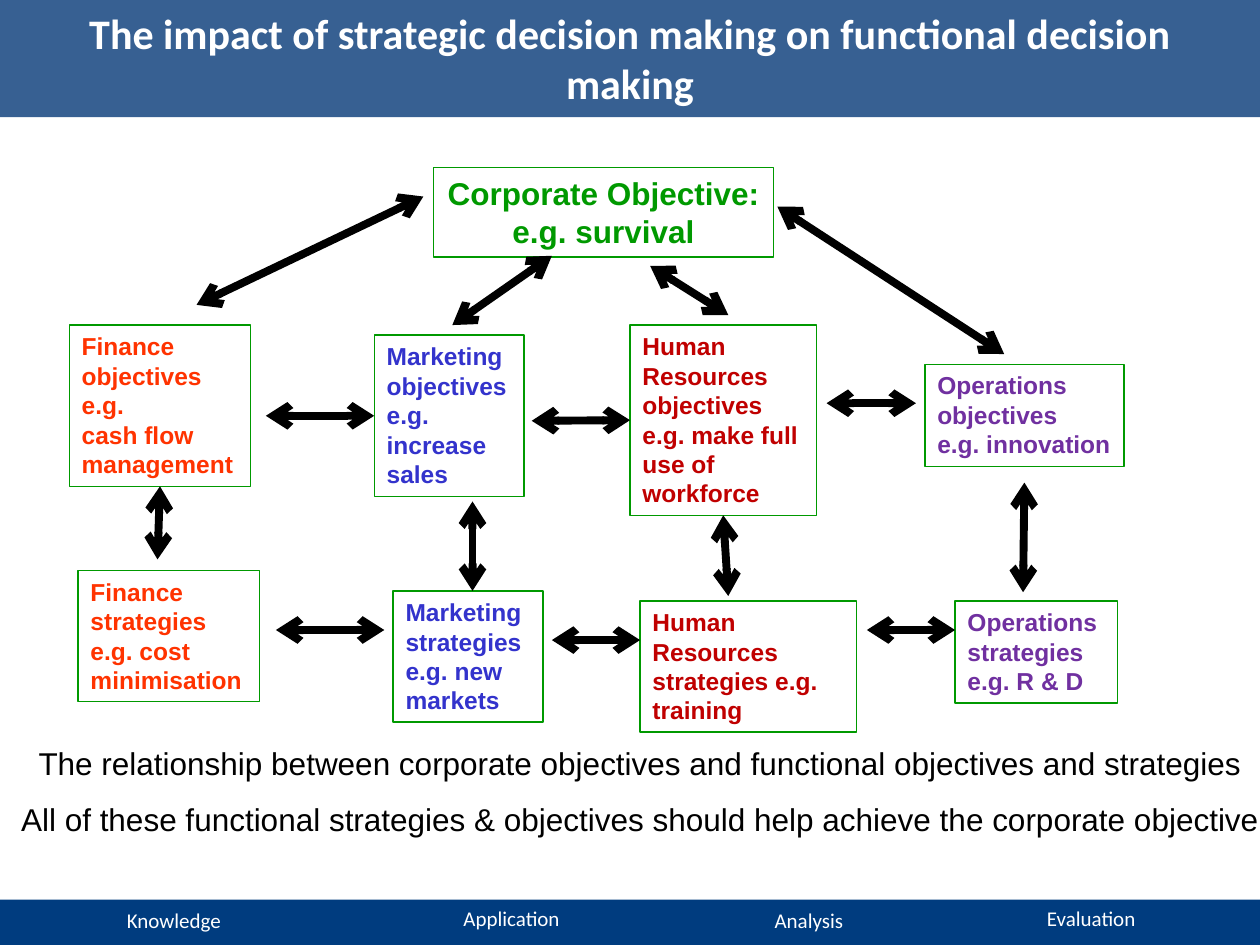
from dataclasses import dataclass

from lxml.etree import SubElement
from pptx import Presentation
from pptx.dml.color import RGBColor
from pptx.enum.shapes import MSO_CONNECTOR, MSO_SHAPE
from pptx.enum.text import MSO_ANCHOR, MSO_AUTO_SIZE, PP_ALIGN
from pptx.oxml.ns import qn
from pptx.util import Inches, Pt


@dataclass(frozen=True)
class Theme:
    """Colours, fonts and type sizes."""
    banner: str = "376092"
    footer: str = "003C7F"
    white: str = "FFFFFF"
    black: str = "000000"
    corporate: str = "009900"
    finance: str = "FF3300"
    marketing: str = "3333CC"
    people: str = "C00000"
    operations: str = "7030A0"
    heading_font: str = "Calibri"
    body_font: str = "Arial"
    title_size: int = 24
    body_size: int = 18
    box_size: int = 14
    footer_size: int = 12


THEME = Theme()


def rgb(value):
    """Turn a hex string into a colour."""
    return RGBColor.from_string(value)


def lengths(box):
    """Turn a box in inches into lengths."""
    return [Inches(v) for v in box]


def set_text(tf, text, size, color, font=THEME.body_font, bold=False,
             align=PP_ALIGN.LEFT, wrap=True):
    """Fill a text frame and format its runs."""
    tf.text = text
    tf.word_wrap = wrap
    tf.vertical_anchor = MSO_ANCHOR.TOP
    for p in tf.paragraphs:
        p.alignment = align
        for r in p.runs:
            r.font.name = font
            r.font.size = Pt(size)
            r.font.bold = bold
            r.font.color.rgb = rgb(color)


def add_band(s, box, color):
    """Add a plain filled band."""
    sp = s.shapes.add_shape(MSO_SHAPE.RECTANGLE, *lengths(box))
    sp.shadow.inherit = False
    sp.fill.solid()
    sp.fill.fore_color.rgb = rgb(color)
    sp.line.fill.background()


def add_title(s, box, text):
    """Place the banner and the slide title."""
    left, top, width, height = box
    add_band(s, box, THEME.banner)
    title = s.shapes.title
    title.left, title.top, title.width, title.height = lengths(
        (left + 0.5, top + 0.01, width - 1, 1.25))
    s.shapes._spTree.append(title._element)
    set_text(title.text_frame, text, THEME.title_size, THEME.white,
             THEME.heading_font, True, PP_ALIGN.CENTER)
    title.text_frame.auto_size = MSO_AUTO_SIZE.NONE


def add_footer(s, box, labels):
    """Place the footer band and its labels."""
    left, top, width, height = box
    add_band(s, box, THEME.footer)
    for label, dx, dy in labels:
        sp = s.shapes.add_textbox(*lengths((left + dx, top + dy, 2.68, 0.3)))
        set_text(sp.text_frame, label, THEME.footer_size, THEME.white,
                 THEME.heading_font, align=PP_ALIGN.CENTER)


def add_node(s, box, text, color, size=THEME.box_size, align=PP_ALIGN.LEFT,
             wrap=True):
    """Add one outlined box of the diagram."""
    sp = s.shapes.add_shape(MSO_SHAPE.RECTANGLE, *lengths(box))
    sp.shadow.inherit = False
    sp.fill.background()
    sp.line.color.rgb = rgb(THEME.corporate)
    sp.line.width = Pt(0.75)
    set_text(sp.text_frame, text, size, color, bold=True, align=align,
             wrap=wrap)
    sp.text_frame.auto_size = MSO_AUTO_SIZE.SHAPE_TO_FIT_TEXT
    return sp


def add_arrow(s, start, end):
    """Add a thick arrow with a head at both ends."""
    cx = s.shapes.add_connector(MSO_CONNECTOR.STRAIGHT,
                                *lengths(start), *lengths(end))
    cx.line.color.rgb = rgb(THEME.black)
    cx.line.width = Pt(4.5)
    ln = cx.line._get_or_add_ln()
    for tag in ("a:headEnd", "a:tailEnd"):
        SubElement(ln, qn(tag)).set("type", "arrow")
    SubElement(cx._element.spPr, qn("a:effectLst"))
    return cx


def add_diagram(s, box):
    """Draw the objectives, the strategies and the arrows between them."""
    left, top = box[:2]

    def place(x, y, *size):
        return (left + x, top + y, *size)

    def arrow(x1, y1, x2, y2):
        return add_arrow(s, place(x1, y1), place(x2, y2))

    add_node(s, place(2.89, 0, 2.7, 0.71),
             "Corporate Objective:\ne.g. survival", THEME.corporate,
             THEME.body_size, PP_ALIGN.CENTER, False)
    finance = add_node(s, place(0, 1.25, 1.44, 1.28),
                       "Finance objectives\ne.g.\vcash flow management",
                       THEME.finance)
    marketing = add_node(s, place(2.42, 1.33, 1.19, 1.28),
                         "Marketing objectives e.g. increase sales",
                         THEME.marketing)
    people = add_node(
        s, place(4.45, 1.25, 1.48, 1.51),
        "Human Resources objectives e.g. make full use of workforce",
        THEME.people)
    add_node(s, place(6.79, 1.56, 1.58, 0.81),
             "Operations\nobjectives\ne.g. innovation", THEME.operations,
             wrap=False)
    add_node(s, place(0.07, 3.2, 1.44, 1.04),
             "Finance strategies\ne.g. cost minimisation", THEME.finance)
    add_node(s, place(2.57, 3.36, 1.19, 1.04),
             "Marketing strategies e.g. new markets", THEME.marketing)
    add_node(s, place(4.53, 3.44, 1.72, 1.04),
             "Human Resources strategies e.g.\ntraining", THEME.people)
    add_node(s, place(7.03, 3.44, 1.29, 0.81),
             "Operations\nstrategies\ne.g. R & D", THEME.operations,
             wrap=False)

    for ends in ((1.01, 1.09, 2.81, 0.23), (3.04, 1.25, 3.83, 0.7),
                 (5.23, 1.17, 4.61, 0.78), (5.62, 0.31, 7.42, 1.48),
                 (6.01, 1.87, 6.72, 1.87), (1.64, 3.67, 2.5, 3.67),
                 (3.83, 3.75, 4.53, 3.75), (6.33, 3.67, 7.03, 3.67),
                 (3.2, 2.65, 3.2, 3.36), (7.58, 2.5, 7.57, 3.37)):
        arrow(*ends)
    arrow(1.56, 1.97, 2.42, 1.97).end_connect(marketing, 1)
    arrow(3.67, 2.01, 4.45, 2.01).end_connect(people, 1)
    arrow(0.72, 2.53, 0.7, 3.11).begin_connect(finance, 2)
    arrow(5.19, 2.76, 5.23, 3.4).begin_connect(people, 2)


def add_summary(s, box, lines):
    """Place the closing statements."""
    tf = s.shapes.add_textbox(*lengths(box)).text_frame
    set_text(tf, "\n".join(lines), THEME.body_size, THEME.black,
             align=PP_ALIGN.CENTER)
    for p in tf.paragraphs[1:]:
        p.space_before = Pt(10)


def main():
    """Build and save the slide."""
    prs = Presentation()
    prs.slide_width, prs.slide_height = Inches(10), Inches(7.5)
    s = prs.slides.add_slide(prs.slide_layouts[5])
    add_title(s, (0, 0, 10, 0.93),
              "The impact of strategic decision making on functional "
              "decision making")
    add_footer(s, (0, 7.14, 10, 0.36),
               (("Knowledge", 0.04, 0.01), ("Application", 2.72, 0),
                ("Analysis", 5.08, 0.01), ("Evaluation", 7.32, 0)))
    add_diagram(s, (0.55, 1.33, 8.37, 4.48))
    add_summary(s, (0, 5.86, 10.16, 0.86), (
        "The relationship between corporate objectives and functional "
        "objectives and strategies",
        "All of these functional strategies & objectives should help "
        "achieve the corporate objective"))
    prs.save("out.pptx")


if __name__ == "__main__":
    main()
